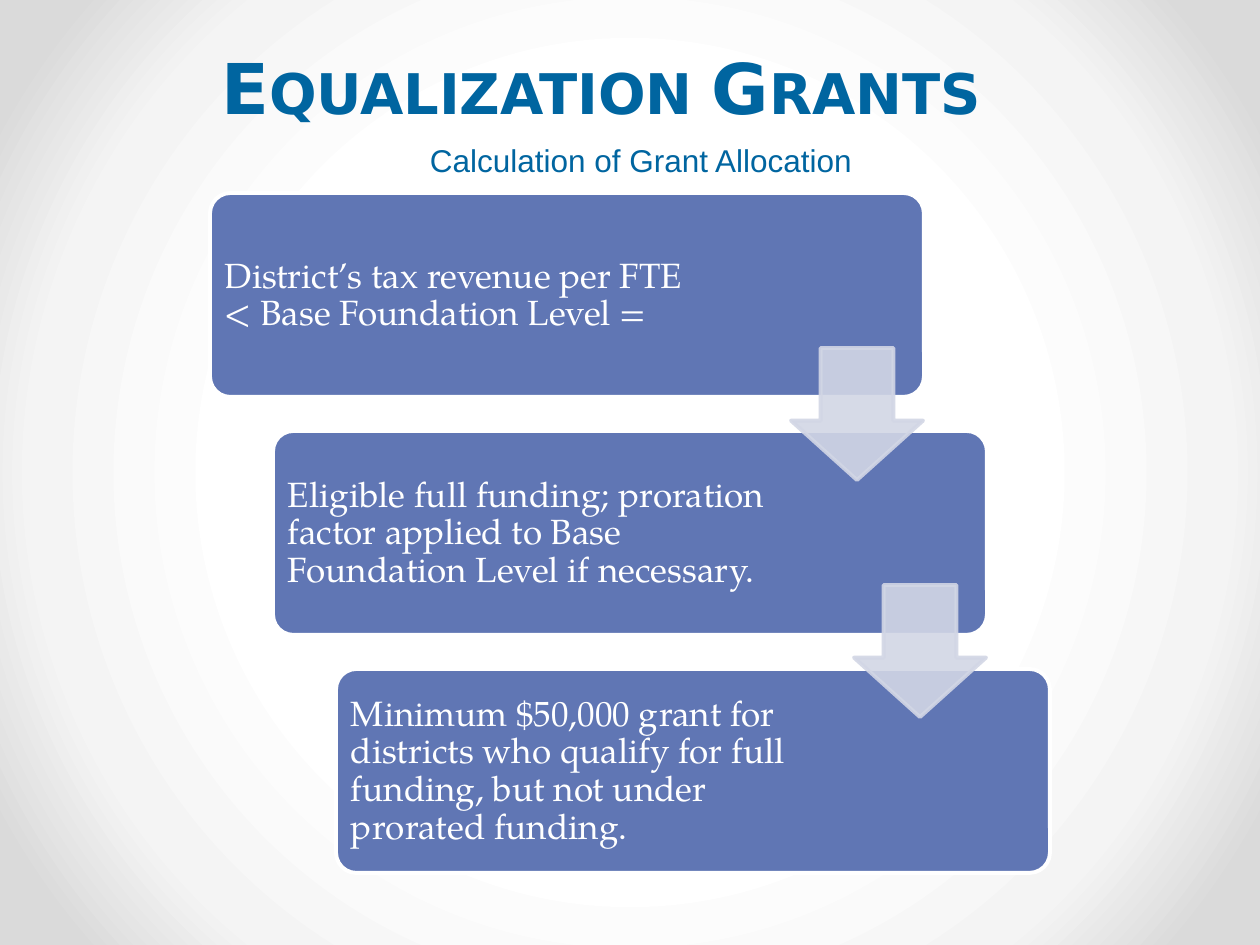
from lxml import etree
from pptx import Presentation
from pptx.dml.color import RGBColor
from pptx.enum.shapes import MSO_SHAPE
from pptx.enum.text import MSO_ANCHOR, MSO_AUTO_SIZE, PP_ALIGN
from pptx.oxml import parse_xml
from pptx.oxml.ns import nsdecls, qn
from pptx.util import Pt

BOX, ARROW = MSO_SHAPE.ROUNDED_RECTANGLE, MSO_SHAPE.DOWN_ARROW
MIDDLE, BOTTOM = MSO_ANCHOR.MIDDLE, MSO_ANCHOR.BOTTOM
LEFT, CENTER = PP_ALIGN.LEFT, PP_ALIGN.CENTER
TEAL = RGBColor(0x00, 0x65, 0xA0)
BLUE = RGBColor(0x60, 0x76, 0xB4)
PALE = RGBColor(0xD2, 0xD6, 0xE5)
WHITE = RGBColor(0xFF, 0xFF, 0xFF)
SCALE = 914400 / 126
STEP_X, STEP_Y = 63, 238


def px(*sizes):
    """Turn px lengths into EMU."""
    return [round(size * SCALE) for size in sizes]


def write(shape, text, face, size, color, align):
    frame = shape.text_frame
    frame.word_wrap = True
    frame.auto_size = MSO_AUTO_SIZE.NONE
    para = frame.paragraphs[0]
    para.text = text
    para.alignment = align
    font = para.font
    font.name, font.size, font.color.rgb = face, Pt(size), color
    return frame, para


prs = Presentation()
prs.slide_width, prs.slide_height = px(1260, 945)
slide = prs.slides.add_slide(prs.slide_layouts[5])
shapes = slide.shapes

# Radial background
slide.background.fill.solid()
back = slide.element.find(".//" + qn("p:bgPr"))
stops = "".join(
    f'<a:gs pos="{pos}000"><a:srgbClr val="{color}"/></a:gs>'
    for pos, color in [(50, "FFFFFF"), (76, "F4F4F4"), (92, "DADADA")]
)
back.replace(back[0], parse_xml(
    f'<a:gradFill {nsdecls("a")} rotWithShape="1"><a:gsLst>{stops}</a:gsLst>'
    '<a:path path="circle"><a:fillToRect l="50000" t="50000" r="50000" b="50000"/>'
    '</a:path></a:gradFill>'
))

# Headings
title = shapes.title
title.left, title.top, title.width, title.height = px(95, 38, 1012, 97)
frame, para = write(title, "Equalization Grants", "DejaVu Sans", 40, TEAL, CENTER)
frame.vertical_anchor = BOTTOM
para.line_spacing = Pt(58)
para.font.bold = True
para.runs[0].font._element.set("cap", "small")

sub = shapes.add_textbox(*px(115, 135, 1052, 50))
write(sub, "Calculation of Grant Allocation", "Arial", 18, TEAL, CENTER)

# Staggered steps
steps = [
    ("District’s tax revenue per FTE < Base Foundation Level =", 494),
    ("Eligible full funding; proration factor applied to Base "
     "Foundation Level if necessary.", 506),
    ("Minimum $50,000 grant for districts who qualify for full funding, "
     "but not under prorated funding.", 506),
]
for i, (text, width) in enumerate(steps):
    x, y = 210 + i * STEP_X, 193 + i * STEP_Y
    box = shapes.add_shape(BOX, *px(x, y, 714, 204))
    box.shadow.inherit = False
    box.adjustments[0] = 0.1
    box.fill.solid()
    box.fill.fore_color.rgb = BLUE
    box.line.color.rgb = WHITE
    box.line.width = Pt(2.25)

    label = shapes.add_textbox(*px(x + 5, y + 6, width, 193))
    frame, para = write(label, text, "TeX Gyre Pagella", 20, WHITE, LEFT)
    frame.vertical_anchor = MIDDLE
    frame.margin_left, frame.margin_top = px(10, 10)
    frame.margin_right, frame.margin_bottom = px(10, 10)
    para.line_spacing = 0.9

# Arrows between steps
for i in range(len(steps) - 1):
    arrow = shapes.add_shape(
        ARROW, *px(791 + i * STEP_X, 348 + i * (STEP_Y - 1), 132, 132))
    arrow.shadow.inherit = False
    arrow.adjustments[0], arrow.adjustments[1] = 0.55, 0.45
    arrow.fill.solid()
    arrow.fill.fore_color.rgb = PALE
    arrow.line.color.rgb = PALE
    arrow.line.width = Pt(2.25)
    for color in arrow.element.spPr.iter(qn("a:srgbClr")):
        etree.SubElement(color, qn("a:alpha"), val="90000")

prs.save("out.pptx")
